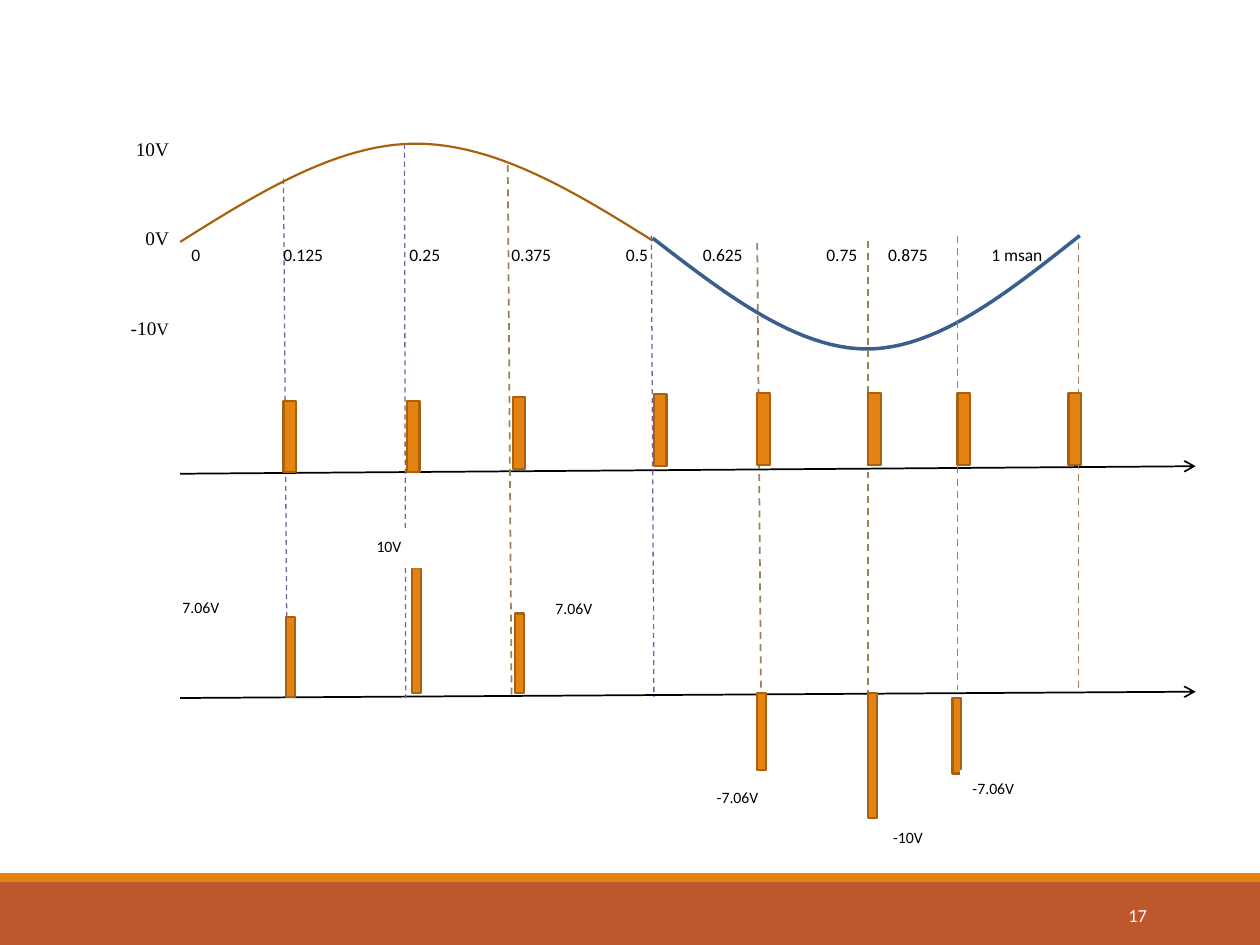
from lxml.etree import SubElement
from pptx import Presentation
from pptx.dml.color import RGBColor
from pptx.enum.dml import MSO_LINE
from pptx.enum.shapes import MSO_CONNECTOR, MSO_SHAPE
from pptx.enum.text import MSO_ANCHOR, PP_ALIGN
from pptx.oxml.ns import qn
from pptx.util import Inches, Pt

THEME = {
    "white": "FFFFFF", "black": "000000", "band": "BD582C", "orange": "E48312",
    "bar_line": "A9610D", "blue": "3A5F8C", "violet": "7D60A0", "tan": "9B8357",
    "sans": "Calibri", "serif": "Times New Roman",
    "scale": 11, "time": 10, "value": 9, "number": 10.5,
}

# Half waves: colour, line width, Bezier segments
HALF_WAVES = [
    ("bar_line", 1.25, [((1.43, 1.92), (2.05, 1.53), (2.68, 1.14), (3.3, 1.14)),
                        ((3.3, 1.14), (3.93, 1.14), (4.56, 1.52), (5.18, 1.91))]),
    ("blue", 2, [((8.57, 1.87), (8, 2.32), (7.44, 2.77), (6.88, 2.77)),
                 ((6.88, 2.77), (6.32, 2.77), (5.75, 2.33), (5.18, 1.89))]),
]
TIME_AXES = [((1.43, 3.76), (9.49, 3.7)), ((1.43, 5.54), (9.49, 5.49))]
# Sampling instants: start, end, colour, line width
SAMPLE_LINES = [
    ((4.03, 1.31), (4.06, 5.54), "tan", 1),
    ((2.25, 1.42), (2.28, 5.53), "violet", 0.75),
    ((3.21, 1.14), (3.22, 5.54), "violet", 0.75),
    ((5.17, 1.87), (5.19, 5.53), "violet", 0.75),
    ((6.01, 1.93), (6.04, 5.54), "tan", 1),
    ((6.89, 1.91), (6.89, 5.53), "tan", 1),
    ((7.6, 1.87), (7.6, 5.48), "tan", 1),
    ((8.56, 1.93), (8.56, 5.48), "tan", 1),
]
# Clock pulses: left, top
PULSES = [(2.25, 3.18), (3.23, 3.18), (4.07, 3.15), (5.19, 3.13),
          (6.01, 3.12), (6.89, 3.12), (7.6, 3.12), (8.48, 3.12)]
PULSE_WIDTH, PULSE_HEIGHT = 0.1, 0.57
# Sampled values: left, top, height
SAMPLES = [(2.27, 4.9, 0.63), (3.27, 4.51, 0.99), (4.09, 4.87, 0.63),
           (6.01, 5.5, 0.61), (6.89, 5.5, 0.99), (7.56, 5.54, 0.6)]
SAMPLE_WIDTH = 0.07
# Value labels: text, left, top, width
VALUES = [("7.06V", 1.35, 4.67, 0.87), ("10V", 2.89, 4.19, 0.87),
          ("7.06V", 4.31, 4.68, 0.87), ("-7.06V", 5.59, 6.18, 0.87),
          ("-10V", 6.99, 6.5, 0.7), ("-7.06V", 7.62, 6.11, 0.87)]
VOLTAGES = [[("10V", 11)], [("0V", 11)], [("-10", 11), ("V", 10)]]
# Time labels: text, left edge
TIMES = [("0", 1.52), ("0.125", 2.25), ("0.25", 3.25), ("0.375", 4.06), ("0.5", 4.97),
         ("0.625", 5.58), ("0.75", 6.56), ("0.875", 7.05), ("1 msan", 7.87)]


def colour(name):
    return RGBColor.from_string(THEME[name])


def set_line(shape, name, width):
    shape.line.color.rgb = colour(name)
    shape.line.width = Pt(width)


def add_box(slide, left, top, width, height, fill, line=None):
    shape = slide.shapes.add_shape(MSO_SHAPE.RECTANGLE, Inches(left), Inches(top),
                                   Inches(width), Inches(height))
    shape.shadow.inherit = False
    shape.fill.solid()
    shape.fill.fore_color.rgb = colour(fill)
    if line:
        set_line(shape, line, 1.25)
    else:
        shape.line.fill.background()
    return shape


def add_line(slide, start, end, name, width):
    x1, y1, x2, y2 = (Inches(value) for value in start + end)
    connector = slide.shapes.add_connector(MSO_CONNECTOR.STRAIGHT, x1, y1, x2, y2)
    set_line(connector, name, width)
    SubElement(connector._element.spPr, qn("a:effectLst"))
    return connector


def add_wave(slide, name, width, segments, steps=24):
    points = [segments[0][0]]
    for a, b, c, d in segments:
        for step in range(1, steps + 1):
            t = step / steps
            u = 1 - t
            points.append(tuple(u**3 * a[i] + 3 * u * u * t * b[i] + 3 * u * t * t * c[i]
                                + t**3 * d[i] for i in (0, 1)))
    points = [(Inches(x), Inches(y)) for x, y in points]
    builder = slide.shapes.build_freeform(*points[0])
    builder.add_line_segments(points[1:], close=False)
    shape = builder.convert_to_shape()
    shape.shadow.inherit = False
    shape.fill.background()
    set_line(shape, name, width)


def add_text_box(slide, left, top, width, height):
    return slide.shapes.add_textbox(Inches(left), Inches(top), Inches(width), Inches(height))


def write(shape, paragraphs, font, name="black", align=PP_ALIGN.LEFT,
          anchor=MSO_ANCHOR.TOP, spacing=1.15, after=10):
    frame = shape.text_frame
    frame.word_wrap = True
    frame.vertical_anchor = anchor
    for index, runs in enumerate(paragraphs):
        paragraph = frame.add_paragraph() if index else frame.paragraphs[0]
        paragraph.alignment = align
        paragraph.line_spacing = spacing
        paragraph.space_after = Pt(after)
        for text, size in runs:
            run = paragraph.add_run()
            run.text = text
            run.font.size = Pt(size)
            run.font.name = THEME[font]
            run.font.color.rgb = colour(name)


def add_time_labels(slide):
    shape = add_text_box(slide, 1.42, 1.86, 7.1, 0.28)
    write(shape, [[("\t".join(text for text, left in TIMES), THEME["time"])]], "sans")
    properties = shape.text_frame.paragraphs[0]._p.get_or_add_pPr()
    tabs = SubElement(properties, qn("a:tabLst"))
    for text, left in TIMES[1:]:
        SubElement(tabs, qn("a:tab"), pos=str(Inches(left - TIMES[0][1])), algn="l")


def main():
    presentation = Presentation()
    presentation.slide_width, presentation.slide_height = Inches(10), Inches(7.5)
    slide = presentation.slides.add_slide(presentation.slide_layouts[6])

    # Footer bands
    add_box(slide, 0, 7, 10, 0.5, "band")
    add_box(slide, 0, 6.93, 10, 0.07, "orange")

    # Voltage scale and sine wave
    scale = add_box(slide, 0.75, 1.01, 0.69, 2.11, "white")
    write(scale, VOLTAGES, "serif", align=PP_ALIGN.RIGHT, after=36)
    for wave in HALF_WAVES:
        add_wave(slide, *wave)

    # Time axes and sampling instants
    for start, end in TIME_AXES:
        axis = add_line(slide, start, end, "black", 1)
        SubElement(axis.line._get_or_add_ln(), qn("a:tailEnd"), type="arrow")
    for sample_line in SAMPLE_LINES:
        add_line(slide, *sample_line).line.dash_style = MSO_LINE.DASH

    # Clock pulses and sampled values
    for left, top in PULSES:
        add_box(slide, left, top, PULSE_WIDTH, PULSE_HEIGHT, "orange", "bar_line")
    for left, top, height in SAMPLES:
        add_box(slide, left, top, SAMPLE_WIDTH, height, "orange", "bar_line")

    # Labels
    for text, left, top, width in VALUES:
        label = add_box(slide, left, top, width, 0.32, "white")
        write(label, [[(text, THEME["value"])]], "sans")
    add_time_labels(slide)

    # Slide number
    number = add_text_box(slide, 8.12, 7.06, 1.08, 0.4)
    write(number, [[("17", THEME["number"])]], "sans", "white", PP_ALIGN.RIGHT,
          MSO_ANCHOR.MIDDLE, spacing=1.0, after=0)

    presentation.save("out.pptx")


if __name__ == "__main__":
    main()
